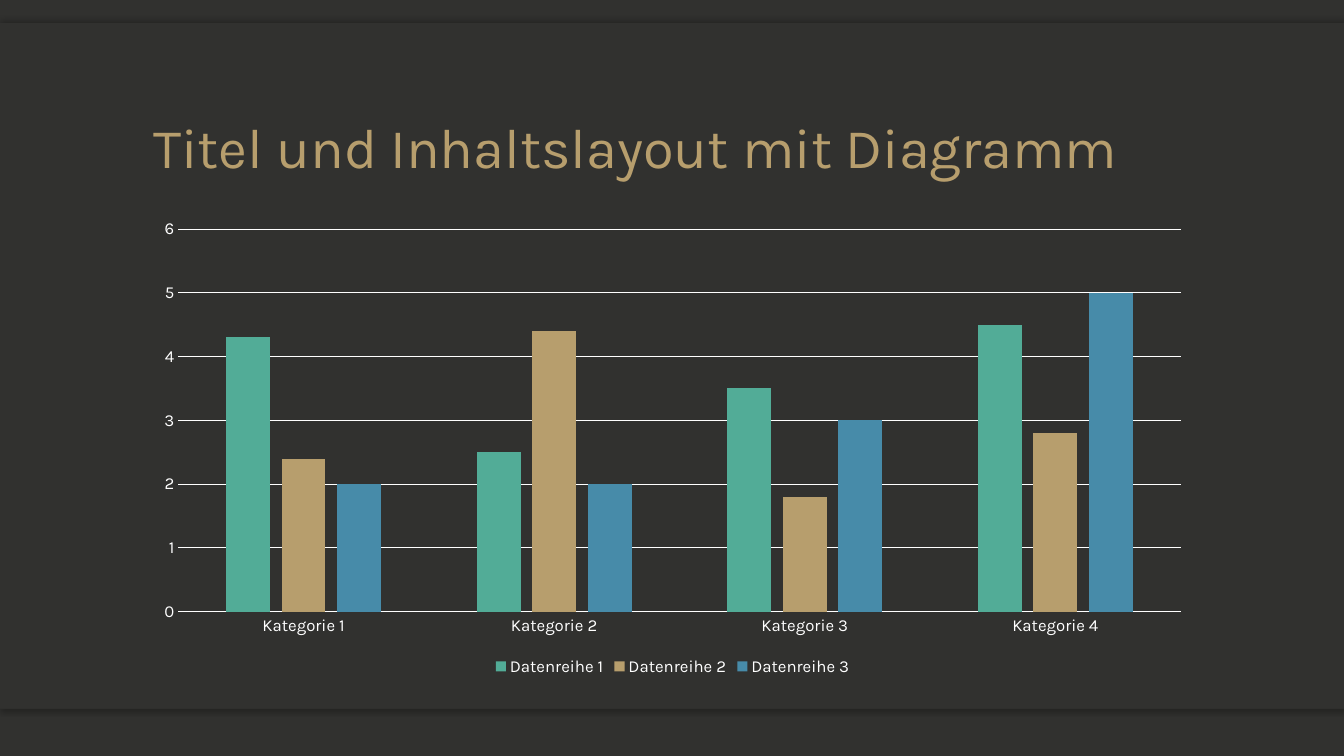
from lxml import etree
from pptx import Presentation
from pptx.chart.data import CategoryChartData
from pptx.dml.color import RGBColor
from pptx.enum import chart as chart_enum, shapes, text
from pptx.oxml.ns import qn
from pptx.util import Inches, Pt

TITLE = "Titel und Inhaltslayout mit Diagramm"
CATEGORIES = ["Kategorie 1", "Kategorie 2", "Kategorie 3", "Kategorie 4"]
SERIES = [
    ("Datenreihe 1", (4.3, 2.5, 3.5, 4.5), "52AC97"),
    ("Datenreihe 2", (2.4, 4.4, 1.8, 2.8), "B79E6D"),
    ("Datenreihe 3", (2, 2, 3, 5), "478BA9"),
]
FONT = "Karla"
DARK, GOLD, WHITE = "31312F", "B79E6D", "FFFFFF"
WIDTH, HEIGHT = 13.33, 7.5
PANEL_TOP, PANEL_HEIGHT, STRIP_HEIGHT = 0.23, 6.8, 0.49
CONTENT_LEFT, CONTENT_WIDTH = 1.42, 10.5
# top, height, shadow direction in degrees (None for no shadow)
BANDS = [
    (PANEL_TOP + PANEL_HEIGHT - STRIP_HEIGHT, STRIP_HEIGHT, 90),
    (PANEL_TOP, STRIP_HEIGHT, 270),
    (PANEL_TOP, PANEL_HEIGHT, None),
]


def paint(fill, color):
    fill.solid()
    fill.fore_color.rgb = RGBColor.from_string(color)


def style_font(font, size, color):
    font.name = FONT
    font.size = Pt(size)
    font.color.rgb = RGBColor.from_string(color)


def style_line(line, color):
    line.width = Pt(0.75)
    paint(line.fill, color)


def add_shadow(shape, direction):
    effects = shape._element.spPr.find(qn("a:effectLst"))
    shadow = etree.SubElement(
        effects, qn("a:outerShdw"), blurRad=str(Pt(4)), dist=str(Pt(2)),
        dir=str(direction * 60000), algn="ctr", rotWithShape="0")
    color = etree.SubElement(shadow, qn("a:srgbClr"), val="000000")
    etree.SubElement(color, qn("a:alpha"), val="25000")


def add_band(slide, top, height, direction):
    band = slide.shapes.add_shape(
        shapes.MSO_SHAPE.RECTANGLE, 0, Inches(top), Inches(WIDTH), Inches(height))
    paint(band.fill, DARK)
    band.line.fill.background()
    band.shadow.inherit = False
    if direction is not None:
        add_shadow(band, direction)


def add_title(slide):
    box = slide.shapes.add_textbox(
        Inches(CONTENT_LEFT), Inches(0.46), Inches(CONTENT_WIDTH), Inches(1.38))
    frame = box.text_frame
    frame.word_wrap = True
    frame.vertical_anchor = text.MSO_ANCHOR.BOTTOM
    paragraph = frame.paragraphs[0]
    paragraph.text = TITLE
    paragraph.line_spacing = 0.9
    style_font(paragraph.font, 40, GOLD)


def add_column_chart(slide):
    data = CategoryChartData()
    data.categories = CATEGORIES
    for name, values, _ in SERIES:
        data.add_series(name, values)
    chart = slide.shapes.add_chart(
        chart_enum.XL_CHART_TYPE.COLUMN_CLUSTERED, Inches(CONTENT_LEFT), Inches(2.08),
        Inches(CONTENT_WIDTH), Inches(4.67), data).chart
    chart.has_title = False
    style_font(chart.font, 10, WHITE)

    chart.has_legend = True
    chart.legend.position = chart_enum.XL_LEGEND_POSITION.BOTTOM
    chart.legend.include_in_layout = False
    style_font(chart.legend.font, 12, WHITE)

    for axis in (chart.category_axis, chart.value_axis):
        axis.major_tick_mark = axis.minor_tick_mark = chart_enum.XL_TICK_MARK.NONE
        style_font(axis.tick_labels.font, 12, WHITE)
    style_line(chart.category_axis.format.line, WHITE)
    value_axis = chart.value_axis
    value_axis.minimum_scale, value_axis.maximum_scale, value_axis.major_unit = 0, 6, 1
    value_axis.format.line.fill.background()
    style_line(value_axis.major_gridlines.format.line, WHITE)

    plot = chart.plots[0]
    plot.gap_width, plot.overlap = 219, -27
    plot.vary_by_categories = False
    for series, (_, _, color) in zip(plot.series, SERIES):
        paint(series.format.fill, color)


def main():
    presentation = Presentation()
    presentation.slide_width = Inches(WIDTH)
    presentation.slide_height = Inches(HEIGHT)
    slide = presentation.slides.add_slide(presentation.slide_layouts[6])
    paint(slide.background.fill, DARK)
    for band in BANDS:
        add_band(slide, *band)
    add_title(slide)
    add_column_chart(slide)
    presentation.save("out.pptx")


if __name__ == "__main__":
    main()
